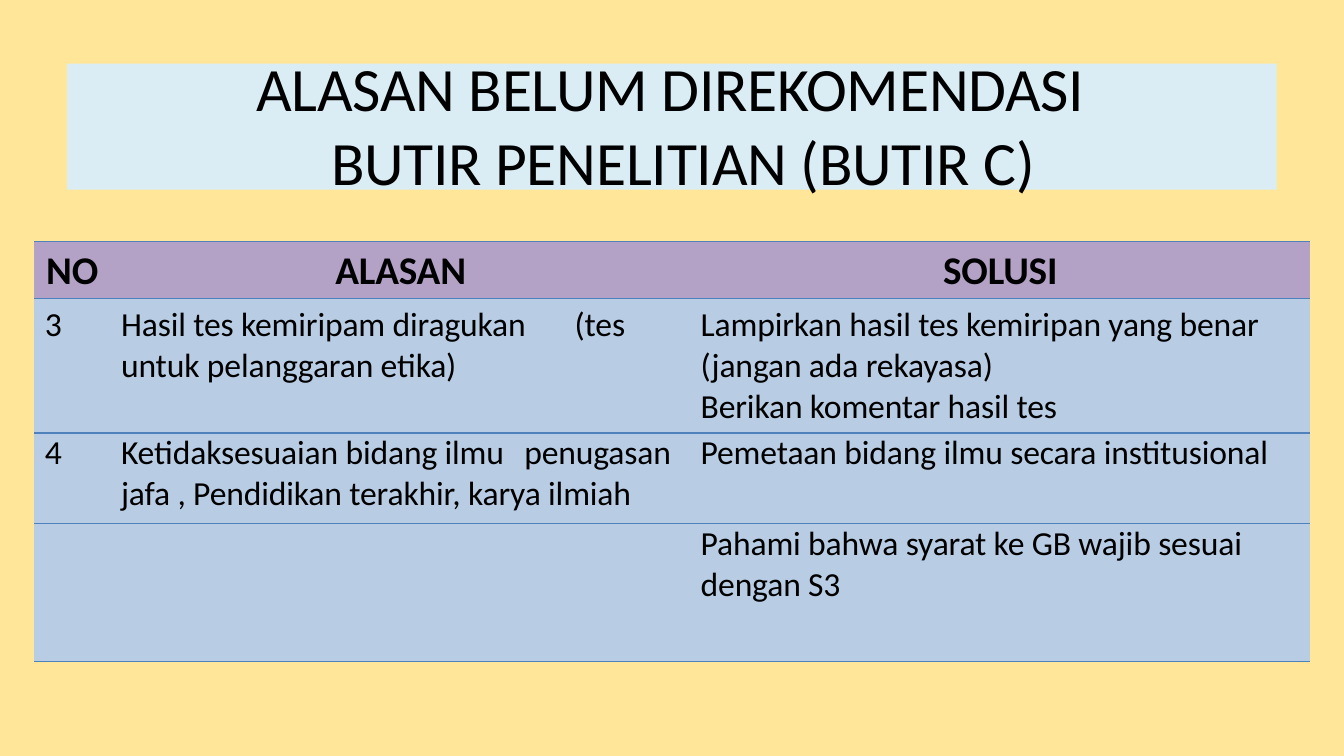
from lxml import etree
from pptx import Presentation
from pptx.dml.color import RGBColor
from pptx.enum.shapes import MSO_SHAPE
from pptx.enum.text import MSO_ANCHOR, PP_ALIGN
from pptx.oxml.ns import qn
from pptx.util import Pt

RECTANGLE = MSO_SHAPE.RECTANGLE
MIDDLE = MSO_ANCHOR.MIDDLE
LEFT, CENTER = PP_ALIGN.LEFT, PP_ALIGN.CENTER
COLORS = {
    "background": "FFE699",
    "banner": "DBEDF4",
    "header": "B3A1C6",
    "body": "B8CDE4",
    "rule": "4F81BC",
    "text": "000000",
}
NO_STYLE = "{2D5ABB26-0587-4C30-8999-92F81FD0307C}"


def format_paragraph(paragraph, size, margin, indent=0, tab=None, spacing=-10, bold=False):
    """Set indents, an optional left tab stop, and the font; lengths in points."""
    properties = paragraph._p.get_or_add_pPr()
    properties.set("marL", str(Pt(margin)))
    properties.set("indent", str(Pt(indent)))
    if tab:
        tab_list = etree.SubElement(properties, qn("a:tabLst"))
        etree.SubElement(tab_list, qn("a:tab"), pos=str(Pt(tab)), algn="l")
    font = paragraph.font
    font.name, font.size, font.bold = "Calibri", Pt(size), bold
    font.color.rgb = RGBColor.from_string(COLORS["text"])
    properties.find(qn("a:defRPr")).set("spc", str(spacing))


def add_rule(cell, side):
    """Draw a thin line on the top (lnT) or bottom (lnB) side of a cell."""
    line = etree.Element(qn(f"a:{side}"), w=str(Pt(1)))
    fill = etree.SubElement(line, qn("a:solidFill"))
    etree.SubElement(fill, qn("a:srgbClr"), val=COLORS["rule"])
    cell._tc.get_or_add_tcPr().insert(0, line)


presentation = Presentation()
presentation.slide_width, presentation.slide_height = Pt(960), Pt(540)
slide = presentation.slides.add_slide(presentation.slide_layouts[6])
slide.background.fill.solid()
slide.background.fill.fore_color.rgb = RGBColor.from_string(COLORS["background"])

# Title banner
banner = slide.shapes.add_shape(RECTANGLE, Pt(48), Pt(45.5), Pt(864), Pt(90))
banner.shadow.inherit = False
banner.fill.solid()
banner.fill.fore_color.rgb = RGBColor.from_string(COLORS["banner"])
banner.line.fill.background()

title = slide.shapes.add_textbox(Pt(181.5), Pt(34), Pt(598), Pt(108))
frame = title.text_frame
frame.word_wrap = True
frame.vertical_anchor = MIDDLE
frame.margin_left = frame.margin_right = frame.margin_bottom = 0
frame.margin_top = Pt(1)
frame.text = "ALASAN BELUM DIREKOMENDASI BUTIR PENELITIAN (BUTIR C)"
format_paragraph(frame.paragraphs[0], 44, 55, -53.5, spacing=-20)

# Table of reasons and solutions
rows = [
    [["NO"], ["ALASAN"], ["SOLUSI"]],
    [
        ["3"],
        ["Hasil tes kemiripam diragukan\t(tes", "untuk pelanggaran etika)"],
        ["Lampirkan hasil tes kemiripan yang benar", "(jangan ada rekayasa)",
         "Berikan komentar hasil tes"],
    ],
    [
        ["4"],
        ["Ketidaksesuaian bidang ilmu\tpenugasan",
         "jafa , Pendidikan terakhir, karya ilmiah"],
        ["Pemetaan bidang ilmu secara institusional"],
    ],
    [[], [], ["Pahami bahwa syarat ke GB wajib sesuai", "dengan S3"]],
]
column_widths = [54, 411, 446.5]
row_heights = [41, 95.8, 64.8, 98.6]
header_margins = [8.5, 4.5, 3.5]
body_margins = [7.5, 8, 11]
row_tabs = {1: 310.3, 2: 295.2}
row_rules = [["lnT"], ["lnT"], ["lnT"], ["lnB"]]

table_frame = slide.shapes.add_table(
    len(rows), len(column_widths), Pt(24.5), Pt(172.5),
    Pt(sum(column_widths)), Pt(sum(row_heights)))
table = table_frame.table
table.first_row = table.horz_banding = False
table._tbl.tblPr.find(qn("a:tableStyleId")).text = NO_STYLE
for column, width in zip(table.columns, column_widths):
    column.width = Pt(width)

for row_index, row in enumerate(rows):
    table.rows[row_index].height = Pt(row_heights[row_index])
    is_header = row_index == 0
    margins = header_margins if is_header else body_margins
    for column_index, lines in enumerate(row):
        cell = table.cell(row_index, column_index)
        cell.margin_left = cell.margin_right = cell.margin_bottom = 0
        cell.margin_top = Pt(4 if row_index < 2 else 0)
        cell.fill.solid()
        cell.fill.fore_color.rgb = RGBColor.from_string(
            COLORS["header" if is_header else "body"])
        for side in row_rules[row_index]:
            add_rule(cell, side)
        cell.text = "\n".join(lines)
        for paragraph in cell.text_frame.paragraphs:
            paragraph.alignment = CENTER if is_header and column_index else LEFT
            tab = row_tabs[row_index] if "\t" in paragraph.text else None
            format_paragraph(paragraph, 28 if is_header else 24,
                             margins[column_index], tab=tab, bold=is_header)

presentation.save("out.pptx")
